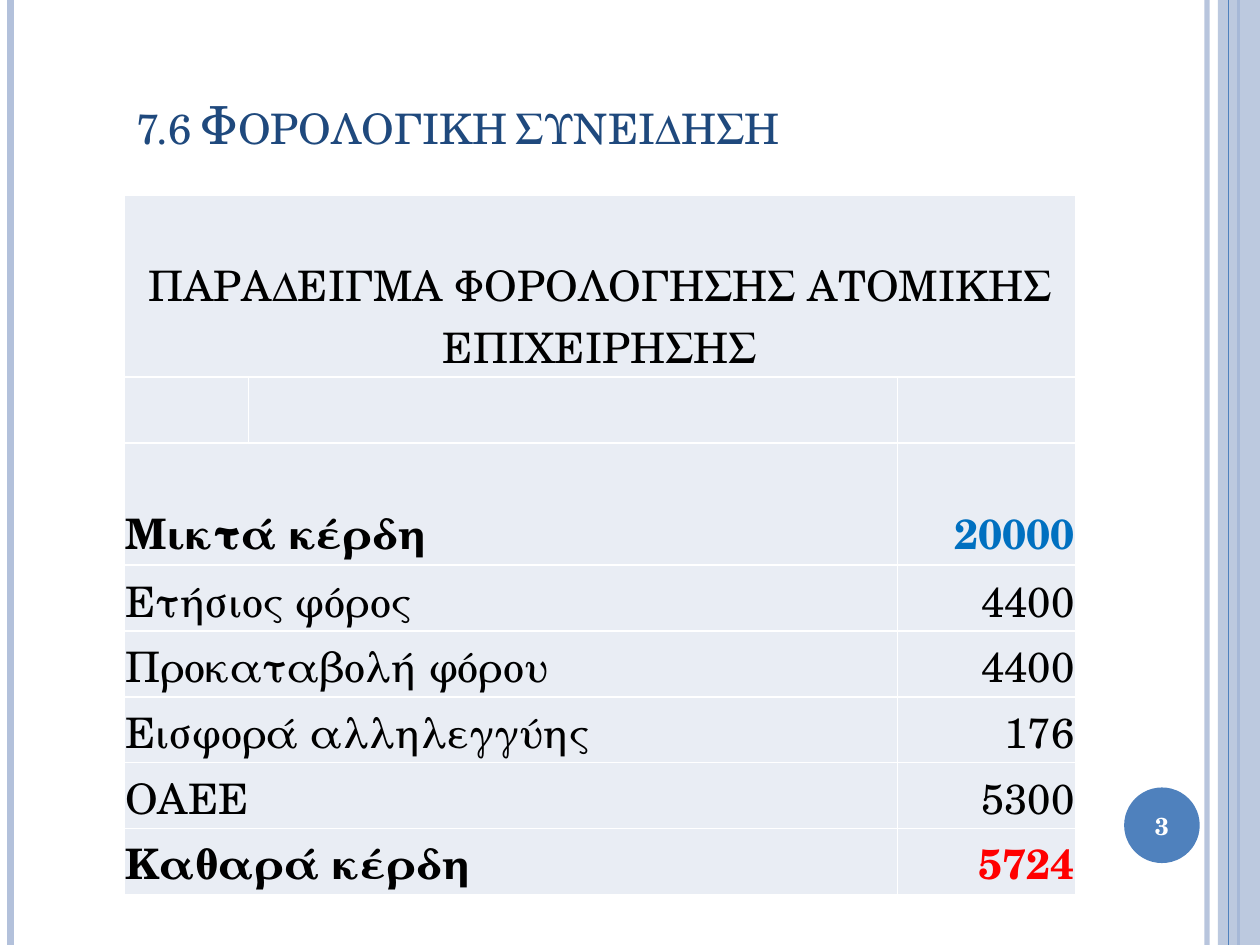
from dataclasses import dataclass

from lxml.etree import SubElement
from pptx import Presentation
from pptx.dml.color import RGBColor
from pptx.enum.shapes import MSO_CONNECTOR as Connector, MSO_SHAPE as Shape
from pptx.enum.text import MSO_ANCHOR as Anchor, MSO_AUTO_SIZE as AutoSize, PP_ALIGN as Align
from pptx.oxml import parse_xml
from pptx.oxml.ns import nsdecls, qn
from pptx.util import Pt

FONT = "TeX Gyre Schola"
WHITE = RGBColor(0xFF, 0xFF, 0xFF)
BLACK = RGBColor(0, 0, 0)
NAVY = RGBColor(0x1F, 0x49, 0x7D)
ACCENT = RGBColor(0x4F, 0x81, 0xBD)
PALE = RGBColor(0xB3, 0xC1, 0xDB)
CELL = RGBColor(0xE9, 0xED, 0xF4)
BLUE = RGBColor(0x00, 0x70, 0xC0)
RED = RGBColor(0xFF, 0, 0)
SLIDE_W, SLIDE_H = 720, 540
LEFT, WIDTH = 70.8, 544


@dataclass
class Stripe:
    x: float
    width: float
    color: RGBColor
    opacity: int = 100


@dataclass
class Entry:
    label: str
    amount: str
    color: RGBColor = BLACK
    bold: bool = False


STRIPES = [
    Stripe(689.8, 3, PALE, 93),
    Stripe(6, 4.5, PALE),
    Stripe(707.8, 1.5, ACCENT),
]
INNER_STRIPE = Stripe(702, 0.75, ACCENT)
HEADING = "ΠΑΡΑΔΕΙΓΜΑ ΦΟΡΟΛΟΓΗΣΗΣ ΑΤΟΜΙΚΗΣ ΕΠΙΧΕΙΡΗΣΗΣ"
ENTRIES = [
    Entry("Μικτά κέρδη", "20000", BLUE, True),
    Entry("Ετήσιος φόρος", "4400"),
    Entry("Προκαταβολή φόρου", "4400"),
    Entry("Εισφορά αλληλεγγύης", "176"),
    Entry("ΟΑΕΕ", "5300"),
    Entry("Καθαρά κέρδη", "5724", RED, True),
]
COLUMNS = [71.2, 371, 101.8]
ROW_H = 37.7
ROWS = [104, ROW_H, 69.8] + [ROW_H] * 5


def format_run(r, size: float, color: RGBColor, bold: bool = False) -> None:
    r.font.name = FONT
    r.font.size = Pt(size)
    r.font.bold = bold
    r.font.color.rgb = color


def set_opacity(element, percent: int) -> None:
    if percent < 100:
        color = element.find(".//" + qn("a:srgbClr"))
        SubElement(color, qn("a:alpha")).set("val", str(percent * 1000))


def add_stripe(s, stripe: Stripe) -> None:
    line = s.shapes.add_connector(
        Connector.STRAIGHT, Pt(stripe.x), 0, Pt(stripe.x), Pt(SLIDE_H))
    line.line.width = Pt(stripe.width)
    line.line.color.rgb = stripe.color
    sp_pr = line._element.spPr
    set_opacity(sp_pr, stripe.opacity)
    SubElement(sp_pr, qn("a:effectLst"))


def add_filled(s, kind: Shape, x: float, y: float, w: float, h: float,
               color: RGBColor, opacity: int = 100) -> None:
    sp = s.shapes.add_shape(kind, Pt(x), Pt(y), Pt(w), Pt(h))
    sp.shadow.inherit = False
    sp.fill.solid()
    sp.fill.fore_color.rgb = color
    sp.line.fill.background()
    set_opacity(sp._element.spPr, opacity)


def add_page_number(s, number: str) -> None:
    add_filled(s, Shape.OVAL, 642.4, 450, 43.2, 43.2, ACCENT)
    tf = s.shapes.add_textbox(Pt(640), Pt(451.4), Pt(48), Pt(41)).text_frame
    tf.word_wrap = True
    tf.vertical_anchor = Anchor.MIDDLE
    tf.text = number
    p = tf.paragraphs[0]
    p.alignment = Align.CENTER
    format_run(p.runs[0], 14, WHITE, True)


def add_title(s) -> None:
    title = s.shapes.title
    title.left, title.top, title.width, title.height = Pt(LEFT), Pt(49), Pt(WIDTH), Pt(44)
    tf = title.text_frame
    tf.word_wrap = True
    tf.auto_size = AutoSize.SHAPE_TO_FIT_TEXT
    tf.vertical_anchor = Anchor.TOP
    p = tf.paragraphs[0]
    p.alignment = Align.LEFT
    for text in ["7.6", " ", "Φορολογικη", " ", "συνειδηση"]:
        r = p.add_run()
        r.text = text
        if text == " ":
            format_run(r, 18, BLACK)
        else:
            format_run(r, 30, NAVY)
            r.font._element.set("cap", "small")


def style_cell(cell) -> None:
    cell.fill.solid()
    cell.fill.fore_color.rgb = CELL
    tc_pr = cell._tc.get_or_add_tcPr()
    for i, side in enumerate("LRTB"):
        tc_pr.insert(i, parse_xml(
            f'<a:ln{side} {nsdecls("a")} w="12700"><a:solidFill>'
            f'<a:srgbClr val="{WHITE}"/></a:solidFill></a:ln{side}>'))


def write_cell(cell, text: str, align: Align, color: RGBColor = BLACK,
               bold: bool = False) -> None:
    cell.margin_left = cell.margin_right = cell.margin_top = Pt(0.7)
    cell.margin_bottom = 0
    cell.vertical_anchor = Anchor.BOTTOM
    cell.text_frame.text = text
    p = cell.text_frame.paragraphs[0]
    p.alignment = align
    format_run(p.runs[0], 24, color, bold)


def add_tax_table(s) -> None:
    table = s.shapes.add_table(
        len(ROWS), len(COLUMNS), Pt(LEFT), Pt(111.4), Pt(WIDTH), Pt(sum(ROWS))).table
    for column, width in zip(table.columns, COLUMNS):
        column.width = Pt(width)
    for row, height in zip(table.rows, ROWS):
        row.height = Pt(height)
    for cell in table.iter_cells():
        style_cell(cell)
    table.cell(0, 0).merge(table.cell(0, 2))
    write_cell(table.cell(0, 0), HEADING, Align.CENTER)
    for i, entry in enumerate(ENTRIES, start=2):
        table.cell(i, 0).merge(table.cell(i, 1))
        write_cell(table.cell(i, 0), entry.label, Align.LEFT, bold=entry.bold)
        write_cell(table.cell(i, 2), entry.amount, Align.RIGHT, entry.color, entry.bold)


def main() -> None:
    prs = Presentation()
    prs.slide_width, prs.slide_height = Pt(SLIDE_W), Pt(SLIDE_H)
    s = prs.slides.add_slide(prs.slide_layouts[5])
    for stripe in STRIPES:
        add_stripe(s, stripe)
    add_filled(s, Shape.RECTANGLE, 696, 0, 24, SLIDE_H, PALE, 87)
    add_stripe(s, INNER_STRIPE)
    add_page_number(s, "3")
    add_tax_table(s)
    add_title(s)
    prs.save("out.pptx")


if __name__ == "__main__":
    main()
